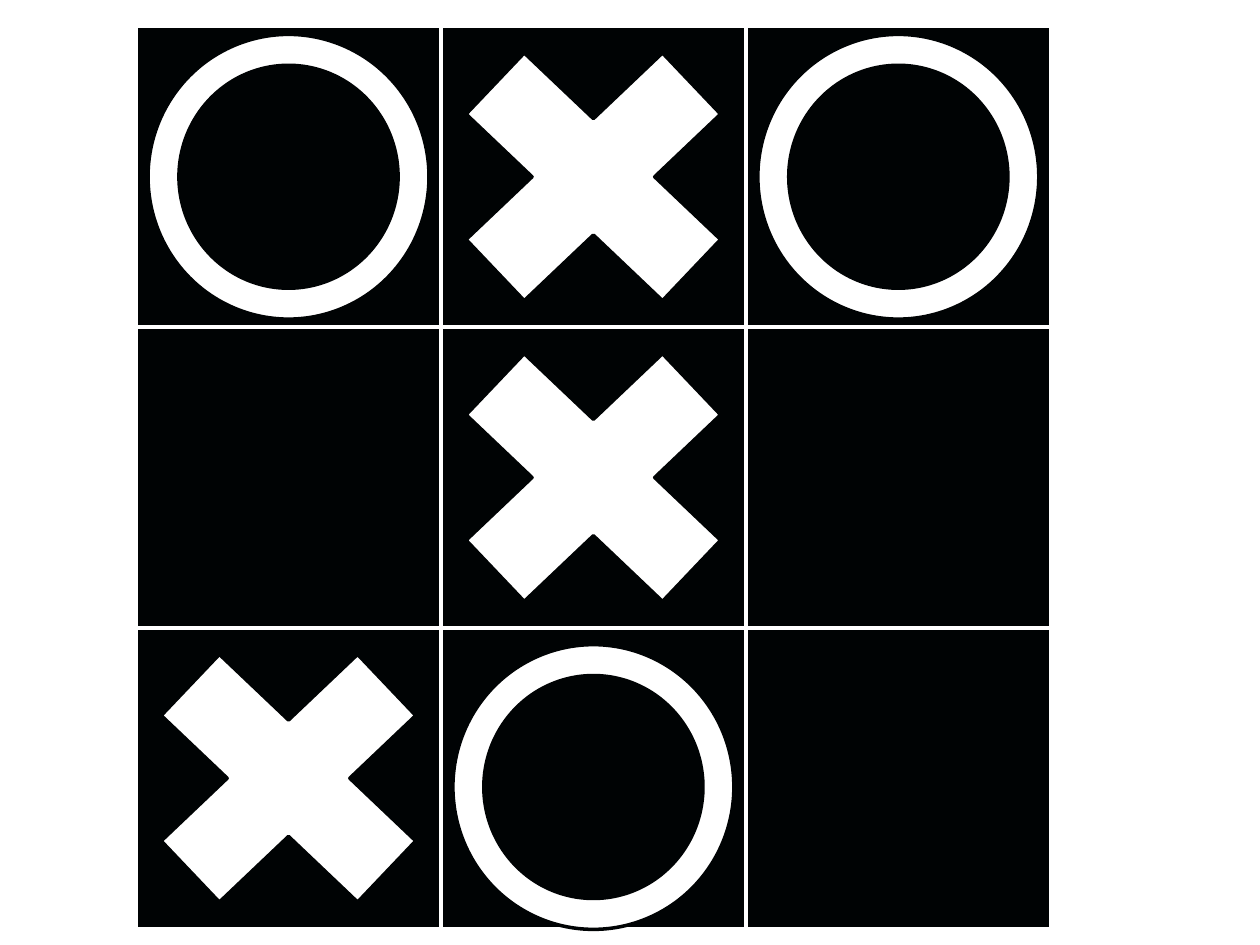
from dataclasses import dataclass

from pptx import Presentation
from pptx.dml import color as c
from pptx.enum import shapes as e
from pptx.util import Inches, Pt

BLACK = c.RGBColor(0x00, 0x03, 0x04)
WHITE = c.RGBColor(0xFF, 0xFF, 0xFF)

LEFT, TOP, WIDTH, HEIGHT = 1.08, 0.21, 7.26, 7.16
SIZE = 3
CELL_W, CELL_H = WIDTH / SIZE, HEIGHT / SIZE
RING_W, RING_H, RING_BAND = 2.23, 2.26, 0.11
CROSS_W, CROSS_H = 3, 2.85


@dataclass(frozen=True)
class Mark:
    symbol: str
    row: int
    col: int
    drop: float = 0


MARKS = [
    Mark("O", 0, 0),
    Mark("X", 0, 1),
    Mark("X", 1, 1),
    Mark("O", 2, 1, 0.07),
    Mark("O", 0, 2),
    Mark("X", 2, 0),
]


def add_outlined(s, kind, x: float, y: float, w: float, h: float,
                 fill: c.RGBColor, line: c.RGBColor):
    sp = s.shapes.add_shape(kind, Inches(x), Inches(y), Inches(w), Inches(h))
    sp.shadow.inherit = False
    sp.fill.solid()
    sp.fill.fore_color.rgb = fill
    sp.line.color.rgb = line
    sp.line.width = Pt(2)
    return sp


def add_square(s, x: float, y: float, w: float, h: float) -> None:
    add_outlined(s, e.MSO_SHAPE.RECTANGLE, x, y, w, h, BLACK, WHITE)


def add_mark(s, mark: Mark) -> None:
    is_ring = mark.symbol == "O"
    kind = e.MSO_SHAPE.DONUT if is_ring else e.MSO_SHAPE.MATH_MULTIPLY
    w, h = (RING_W, RING_H) if is_ring else (CROSS_W, CROSS_H)
    x = LEFT + mark.col * CELL_W + (CELL_W - w) / 2
    y = TOP + mark.row * CELL_H + (CELL_H - h) / 2 + mark.drop
    sp = add_outlined(s, kind, x, y, w, h, WHITE, BLACK)
    if is_ring:
        sp.adjustments[0] = RING_BAND


def main() -> None:
    prs = Presentation()
    prs.slide_width, prs.slide_height = Inches(10), Inches(7.5)
    s = prs.slides.add_slide(prs.slide_layouts[6])

    add_square(s, LEFT, TOP, WIDTH, HEIGHT)
    for row in range(SIZE):
        for col in range(SIZE):
            add_square(s, LEFT + col * CELL_W, TOP + row * CELL_H, CELL_W, CELL_H)
    for mark in MARKS:
        add_mark(s, mark)

    prs.save("out.pptx")


if __name__ == "__main__":
    main()
